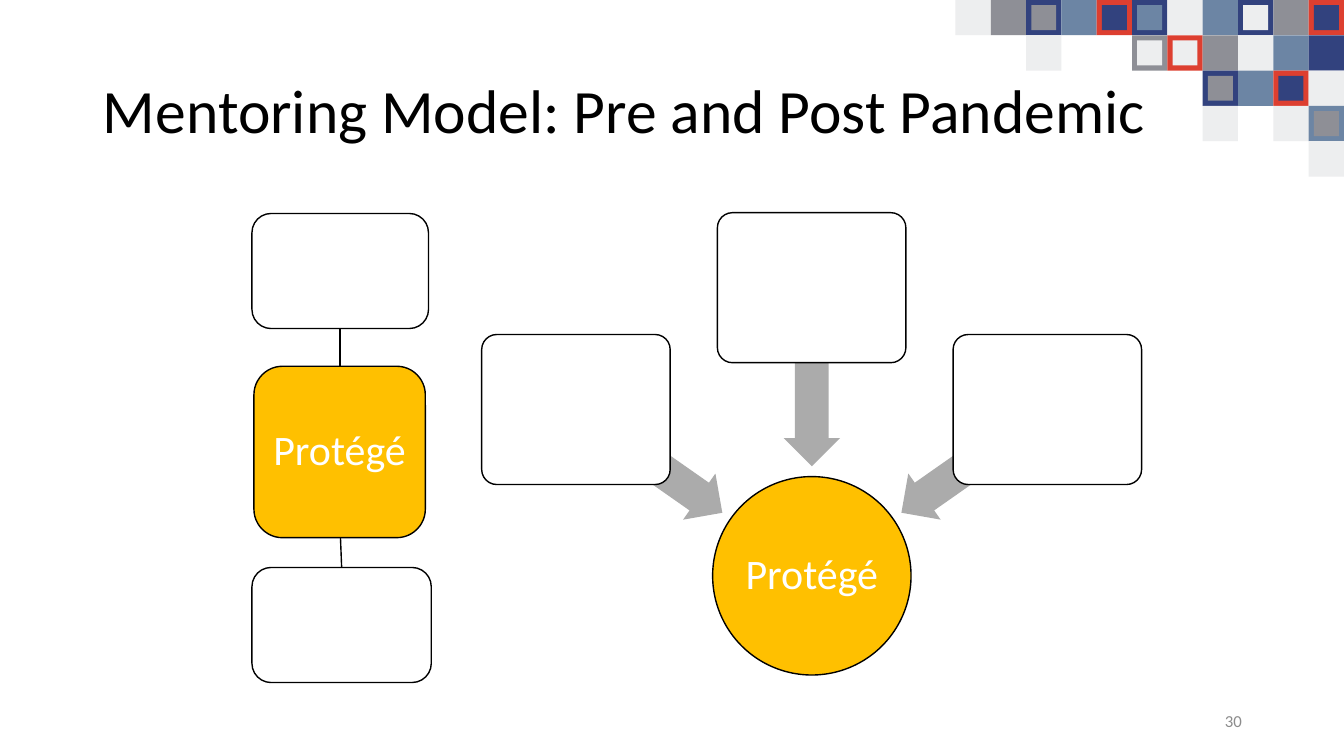
import pptx
import pptx.util
import pptx.dml.color
import pptx.enum.shapes
import pptx.enum.text
import pptx.oxml.ns
from lxml import etree

Cm = pptx.util.Cm
SHAPE = pptx.enum.shapes.MSO_SHAPE
ALIGN = pptx.enum.text.PP_ALIGN

COLORS = {
    "black": "000000", "white": "FFFFFF", "gold": "FFC000",
    "arrow": "ABABAB", "number": "8C8C8C",
    "L": "EDEEEF", "G": "8E8F96", "N": "32427E", "S": "6C85A4", "R": "DD3F30",
}
MOSAIC = [
    "L G NG S RN NS L S NL G RN",
    "- - L - - GL RL G L S N",
    "- - - - - - - NG S RN L",
    "- - - - - - - L - L SG",
    "- - - - - - - - - - L",
]


def color(name):
    return pptx.dml.color.RGBColor.from_string(COLORS[name])


def write(frame, text, size, ink, align=ALIGN.LEFT, spacing=1.0, inset=None):
    frame.word_wrap = True
    frame.vertical_anchor = pptx.enum.text.MSO_ANCHOR.MIDDLE
    if inset is not None:
        frame.margin_left = frame.margin_right = Cm(inset)
        frame.margin_top = frame.margin_bottom = Cm(inset)
    frame.text = text
    paragraph = frame.paragraphs[0]
    paragraph.alignment = align
    paragraph.line_spacing = spacing
    paragraph.font.name = "Calibri"
    paragraph.font.size = pptx.util.Pt(size)
    paragraph.font.color.rgb = color(ink)


class Deck:
    def __init__(self, width, height):
        self.presentation = pptx.Presentation()
        self.presentation.slide_width = Cm(width)
        self.presentation.slide_height = Cm(height)
        self.slide = self.presentation.slides.add_slide(self.presentation.slide_layouts[5])

    def title(self, text, left, top, width, height):
        title = self.slide.shapes.title
        title.left, title.top, title.width, title.height = map(Cm, (left, top, width, height))
        write(title.text_frame, text, 44, "black", spacing=0.9)

    def label(self, text, left, top, width, height, **style):
        box = self.slide.shapes.add_textbox(*map(Cm, (left, top, width, height)))
        write(box.text_frame, text, **style)

    def shape(self, kind, left, top, width, height, fill, outline=True, adjust=(), rotation=0):
        shape = self.slide.shapes.add_shape(kind, *map(Cm, (left, top, width, height)))
        shape.shadow.inherit = False
        shape.fill.solid()
        shape.fill.fore_color.rgb = color(fill)
        if outline:
            shape.line.color.rgb = color("black")
            shape.line.width = pptx.util.Pt(1)
        else:
            shape.line.fill.background()
        for index, value in enumerate(adjust):
            shape.adjustments[index] = value
        shape.rotation = rotation
        return shape

    def protege(self, kind, left, top, size):
        protege = self.shape(kind, left, top, size, size, "gold")
        write(protege.text_frame, "Protégé", 30, "white", ALIGN.CENTER, 0.9, inset=0)

    def link(self, x1, y1, x2, y2):
        link = self.slide.shapes.add_connector(
            pptx.enum.shapes.MSO_CONNECTOR.STRAIGHT, *map(Cm, (x1, y1, x2, y2)))
        link.line.color.rgb = color("black")
        link.line.width = pptx.util.Pt(1)
        etree.SubElement(link._element.spPr, pptx.oxml.ns.qn("a:effectLst"))

    def mosaic(self, rows, left, tile, border):
        for row, line in enumerate(rows):
            for column, codes in enumerate(line.split()):
                for depth, code in enumerate(codes.strip("-")):
                    inset = depth * border
                    size = tile - 2 * inset
                    self.shape(SHAPE.RECTANGLE, left + column * tile + inset,
                               row * tile + inset, size, size, code, outline=False)


def main():
    deck = Deck(33.87, 19.05)
    deck.title("Mentoring Model: Pre and Post Pandemic", 2.34, 1.02, 29.21, 3.68)

    deck.link(8.57, 8.28, 8.57, 9.23)
    deck.link(8.58, 13.55, 8.61, 14.3)
    deck.protege(SHAPE.ROUNDED_RECTANGLE, 6.4, 9.23, 4.32)
    for top, width in ((5.38, 4.45), (14.3, 4.52)):
        deck.shape(SHAPE.ROUNDED_RECTANGLE, 6.35, top, width, 2.9, "white")

    deck.protege(SHAPE.OVAL, 17.96, 12.01, 5)
    for index, (mentor_top, arrow_top) in enumerate(((8.43, 10.92), (5.36, 8.79), (8.43, 10.92))):
        deck.shape(SHAPE.LEFT_ARROW, 14.11 + index * 4.1, arrow_top, 4.5, 1.42, "arrow",
                   outline=False, adjust=(0.6, 0.5), rotation=215 + index * 55)
        deck.shape(SHAPE.ROUNDED_RECTANGLE, 12.14 + index * 5.94, mentor_top, 4.75, 3.78,
                   "white", adjust=(0.1,))

    deck.label("30", 23.93, 17.65, 7.62, 1.02, size=12, ink="number", align=ALIGN.RIGHT)
    deck.mosaic(MOSAIC, left=24.08, tile=0.89, border=0.13)
    deck.presentation.save("out.pptx")


if __name__ == "__main__":
    main()
